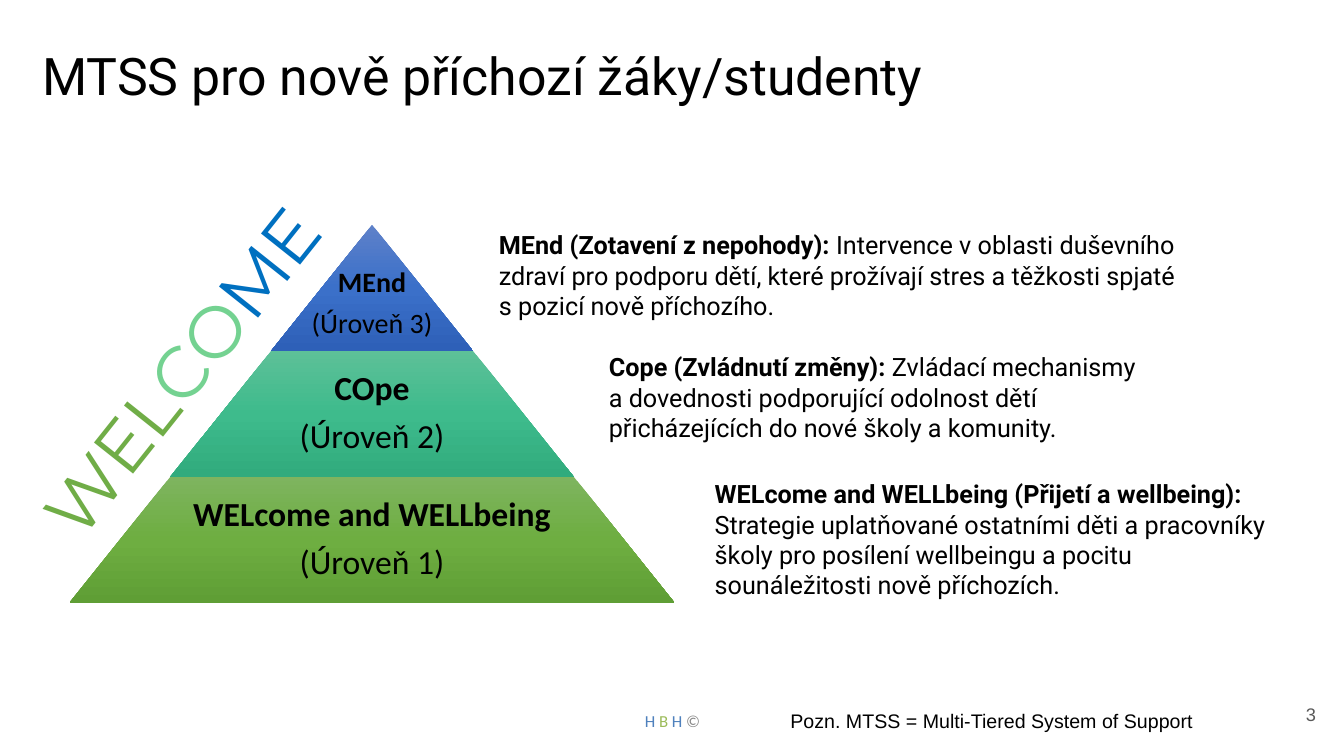
"""Build the slide with the three-tier MTSS support pyramid."""
import copy
from dataclasses import dataclass
from typing import Optional

import pptx
import pptx.dml.color
import pptx.enum.shapes
import pptx.enum.text
import pptx.oxml.ns
import pptx.slide
import pptx.util

EMU_PER_PX = 9144
SLIDE_WIDTH, SLIDE_HEIGHT = 1333, 750
APEX_X, APEX_Y = 369, 223
TIER_HEIGHT, TIER_SLOPE = 125, 100

COLORS = {
    "black": "000000",
    "number": "595959",
    "green": "70AD47",
    "mint": "74D291",
    "blue": "0070C0",
    "footer_blue": "4F81BD",
    "footer_green": "9BBB59",
    "footer_gray": "888888",
}
ALIGN = pptx.enum.text.PP_ALIGN
ANCHOR = pptx.enum.text.MSO_ANCHOR


@dataclass(frozen=True)
class Run:
    text: str
    color: str = "black"
    bold: bool = False


@dataclass(frozen=True)
class Label:
    box: tuple[int, int, int, int]
    paragraphs: list[list[Run]]
    size: int
    font: str
    align: ALIGN = ALIGN.LEFT
    anchor: ANCHOR = ANCHOR.TOP
    margins: tuple[int, int, int, int] = (10, 5, 10, 5)
    line_spacing: Optional[float] = None
    space_before: float = 0
    rotation: float = 0


@dataclass(frozen=True)
class Tier:
    name: str
    level: str
    gradient: tuple[str, str, str]
    label_width: int
    size: int
    space_before: float
    margins: tuple[int, int, int, int] = (3, 3, 3, 3)


TIERS = [
    Tier("MEnd", "(Úroveň 3)", ("5E81C9", "3B70C9", "2E60B8"), 200, 20, 7, (2, 34, 2, 2)),
    Tier("COpe", "(Úroveň 2)", ("5DC098", "3EBB8C", "31AB7D"), 260, 24, 8.4),
    Tier("WELcome and WELLbeing", "(Úroveň 1)", ("7EB45F", "6EAE41", "5F9E35"), 390, 24, 8.4),
]

DESCRIPTIONS = [
    ((485, 223, 720, 124), "MEnd (Zotavení z nepohody): ",
     "Intervence v oblasti duševního zdraví pro podporu dětí, které prožívají "
     "stres a těžkosti spjaté \vs pozicí nově příchozího."),
    ((594, 344, 561, 124), "Cope (Zvládnutí změny): ",
     "Zvládací mechanismy a dovednosti podporující odolnost dětí "
     "přicházejících do nové školy a komunity."),
    ((699, 470, 582, 145), "WELcome and WELLbeing (Přijetí a wellbeing): ",
     "Strategie uplatňované ostatními děti a pracovníky školy pro posílení "
     "wellbeingu a pocitu sounáležitosti nově příchozích."),
]

LABELS = [
    Label((32, 12, 1194, 125), [[Run("MTSS pro nově příchozí žáky/studenty")]],
          37, "Roboto", anchor=ANCHOR.MIDDLE),
    Label((1235, 680, 80, 57), [[Run("3", "number")]],
          13, "Arial", ALIGN.RIGHT, ANCHOR.MIDDLE),
    *(Label(box, [[Run(heading, bold=True), Run(body)]], 18, "Roboto")
      for box, heading, body in DESCRIPTIONS),
    Label((-34, 316, 442, 115),
          [[Run("WEL", "green"), Run("CO", "mint"), Run("ME", "blue")]],
          51, "Montserrat", ALIGN.CENTER, rotation=308.5),
    Label((456, 695, 422, 40),
          [[Run("H ", "footer_blue"), Run("B ", "footer_green"),
            Run("H", "footer_blue"), Run(" ©", "footer_gray")]],
          12, "Calibri", ALIGN.CENTER, ANCHOR.MIDDLE),
    Label((774, 698, 475, 34), [[Run("Pozn. MTSS = Multi-Tiered System of Support")]],
          14, "Arial"),
]


def px(length: int) -> pptx.util.Emu:
    return pptx.util.Emu(length * EMU_PER_PX)


def rgb(value: str) -> pptx.dml.color.RGBColor:
    return pptx.dml.color.RGBColor.from_string(value)


def set_format(target: object, values: dict[str, object]) -> None:
    for name, value in values.items():
        setattr(target, name, value)


def add_label(slide: pptx.slide.Slide, label: Label) -> None:
    shape = slide.shapes.add_textbox(*map(px, label.box))
    shape.rotation = label.rotation
    left, top, right, bottom = map(px, label.margins)
    frame = shape.text_frame
    set_format(frame, {
        "word_wrap": True, "vertical_anchor": label.anchor,
        "margin_left": left, "margin_top": top,
        "margin_right": right, "margin_bottom": bottom,
    })
    for index, runs in enumerate(label.paragraphs):
        paragraph = frame.add_paragraph() if index else frame.paragraphs[0]
        set_format(paragraph, {
            "alignment": label.align, "line_spacing": label.line_spacing,
            "space_before": pptx.util.Pt(label.space_before if index else 0),
        })
        for part in runs:
            for position, line in enumerate(part.text.split("\v")):
                if position:
                    paragraph.add_line_break()
                run = paragraph.add_run()
                run.text = line
                set_format(run.font, {
                    "name": label.font, "size": pptx.util.Pt(label.size), "bold": part.bold,
                })
                run.font.color.rgb = rgb(COLORS[part.color])


def add_tier(slide: pptx.slide.Slide, index: int, tier: Tier) -> None:
    half_width = TIER_SLOPE * (index + 1)
    top = APEX_Y + TIER_HEIGHT * index
    shape = slide.shapes.add_shape(
        pptx.enum.shapes.MSO_SHAPE.TRAPEZOID,
        px(APEX_X - half_width), px(top), px(2 * half_width), px(TIER_HEIGHT))
    shape.adjustments[0] = TIER_SLOPE / TIER_HEIGHT
    shape.shadow.inherit = False
    shape.line.fill.background()
    shape.fill.gradient()
    shape.fill.gradient_angle = 270
    stop_list = next(shape.element.spPr.iter(pptx.oxml.ns.qn("a:gsLst")))
    stop_list.append(copy.deepcopy(stop_list[0]))
    for order, (stop, color) in enumerate(zip(shape.fill.gradient_stops, tier.gradient)):
        stop.position = order / 2
        stop.color.rgb = rgb(color)
    add_label(slide, Label(
        (APEX_X - tier.label_width // 2, top, tier.label_width, TIER_HEIGHT),
        [[Run(tier.name, bold=True)], [Run(tier.level)]],
        tier.size, "Calibri", ALIGN.CENTER, ANCHOR.MIDDLE,
        tier.margins, 0.9, tier.space_before))


def main() -> None:
    presentation = pptx.Presentation()
    set_format(presentation, {"slide_width": px(SLIDE_WIDTH), "slide_height": px(SLIDE_HEIGHT)})
    slide = presentation.slides.add_slide(presentation.slide_layouts[6])
    for index, tier in enumerate(TIERS):
        add_tier(slide, index, tier)
    for label in LABELS:
        add_label(slide, label)
    presentation.save("out.pptx")


if __name__ == "__main__":
    main()
